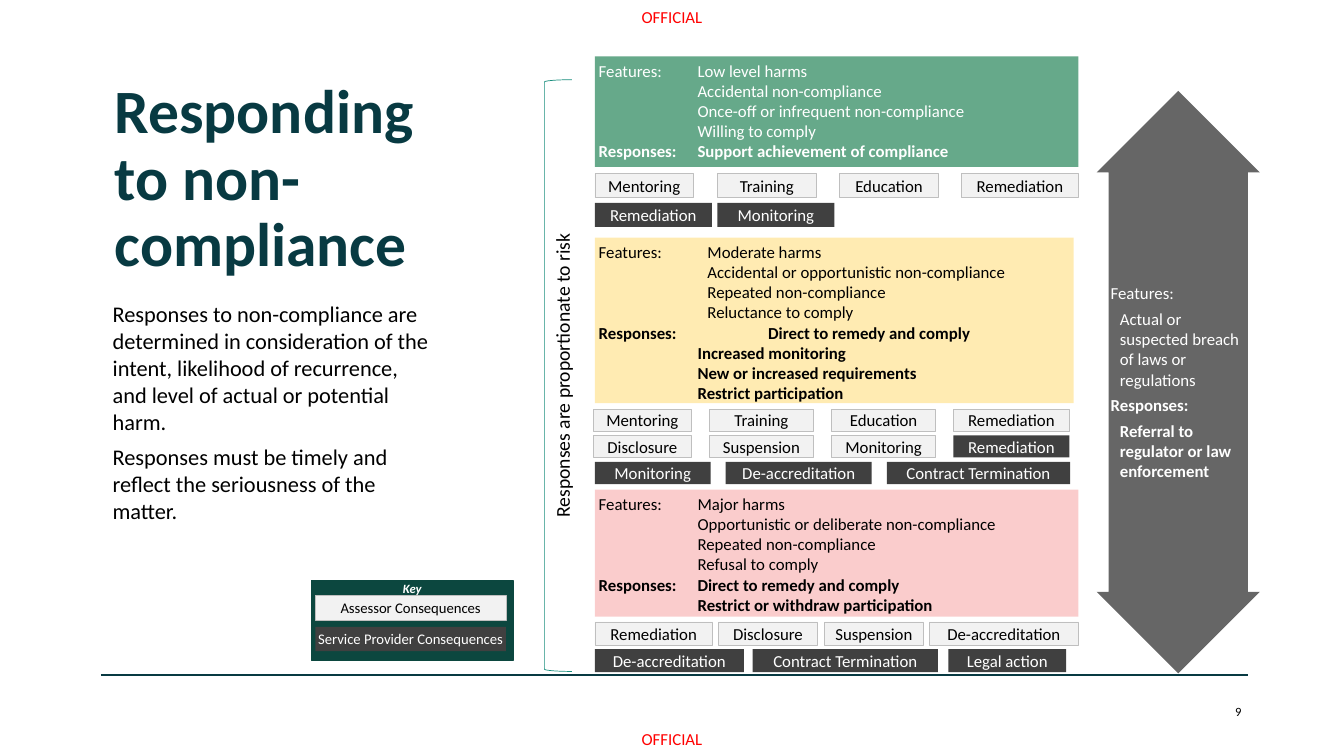
from lxml.etree import SubElement
from pptx import Presentation
from pptx.dml.color import RGBColor
from pptx.enum.shapes import MSO_CONNECTOR as Connector, MSO_SHAPE as Shape
from pptx.enum.text import MSO_ANCHOR as Anchor, MSO_AUTO_SIZE as AutoSize, PP_ALIGN as Align
from pptx.oxml.ns import qn
from pptx.util import Cm, Pt

COLOURS = {
    "ink": "000000", "white": "FFFFFF", "marking": "FF0000", "title": "083A42",
    "key": "0C473F", "bracket": "198E7D", "light": "F2F2F2", "edge": "BFBFBF",
    "dark": "404040", "low": "00703C", "moderate": "FFC000", "major": "E60000",
}
FONT = "Calibri"
TITLE = "Responding to non-compliance"
INTRO = [
    "Responses to non-compliance are determined in consideration of the intent, "
    "likelihood of recurrence, and level of actual or potential harm.",
    "Responses must be timely and reflect the seriousness of the matter.",
]
RISK = "Responses are proportionate to risk"
MARKING = "OFFICIAL"
PAGE_NUMBER = "9"

TAB = 2.49
LEFT = 14.99
LEVELS = [
    {
        "colour": "low", "opacity": 60, "text": "white", "box": (LEFT, 1.42, 12.19, 2.79),
        "features": ["Low level harms", "Accidental non-compliance",
                     "Once-off or infrequent non-compliance", "Willing to comply"],
        "responses": ["Support achievement of compliance"],
        "feature_indent": TAB, "response_indent": TAB, "chip_height": 0.61,
        "rows": [
            (4.37, [("light", "Mentoring", LEFT, 2.49), ("light", "Training", 18.08, 2.49),
                    ("light", "Education", 21.16, 2.49), ("light", "Remediation", 24.23, 2.95)]),
            (5.11, [("dark", "Remediation", LEFT, 2.95), ("dark", "Monitoring", 18.08, 2.95)]),
        ],
    },
    {
        "colour": "moderate", "opacity": 30, "text": "ink", "box": (LEFT, 5.99, 12.07, 4.17),
        "features": ["Moderate harms", "Accidental or opportunistic non-compliance",
                     "Repeated non-compliance", "Reluctance to comply"],
        "responses": ["Direct to remedy and comply", "Increased monitoring",
                      "New or increased requirements", "Restrict participation"],
        "feature_indent": 2.74, "response_indent": 4.27, "chip_height": 0.56,
        "rows": [
            (10.31, [("light", "Mentoring", 14.96, 2.46), ("light", "Training", 17.88, 2.62),
                     ("light", "Education", 20.96, 2.62), ("light", "Remediation", 24.03, 2.92)]),
            (10.97, [("light", "Disclosure", 14.96, 2.46), ("light", "Suspension", 17.88, 2.62),
                     ("light", "Monitoring", 20.96, 2.62), ("dark", "Remediation", 24.03, 2.92)]),
            (11.64, [("dark", "Monitoring", LEFT, 2.92), ("dark", "De-accreditation", 18.29, 3.68),
                     ("dark", "Contract Termination", 22.35, 4.62)]),
        ],
    },
    {
        "colour": "major", "opacity": 20, "text": "ink", "box": (LEFT, 12.34, 12.19, 3.2),
        "features": ["Major harms", "Opportunistic or deliberate non-compliance",
                     "Repeated non-compliance", "Refusal to comply"],
        "responses": ["Direct to remedy and comply", "Restrict or withdraw participation"],
        "feature_indent": TAB, "response_indent": TAB, "chip_height": 0.58,
        "rows": [
            (15.67, [("light", "Remediation", LEFT, 2.97), ("light", "Disclosure", 18.11, 2.49),
                     ("light", "Suspension", 20.78, 2.49), ("light", "De-accreditation", 23.42, 3.76)]),
            (16.36, [("dark", "De-accreditation", LEFT, 3.76), ("dark", "Contract Termination", 18.97, 4.67),
                     ("dark", "Legal action", 23.9, 2.97)]),
        ],
    },
]
KEY_CHIPS = [("light", "Assessor Consequences", 15.01), ("dark", "Service Provider Consequences", 15.8)]
ARROW_GUIDES = {"adj1": 85300, "adj2": 50000}
REFERRAL = [
    ("Features:", False, 0),
    ("Actual or suspected breach of laws or regulations", False, 0.23),
    ("Responses:", True, 0),
    ("Referral to regulator or law enforcement", True, 0.23),
]


def rgb(name):
    return RGBColor.from_string(COLOURS[name])


def set_frame(item, insets, anchor=Anchor.TOP):
    frame = item.text_frame
    frame.word_wrap = True
    frame.auto_size = AutoSize.NONE
    frame.vertical_anchor = anchor
    frame.margin_left, frame.margin_top, frame.margin_right, frame.margin_bottom = map(Cm, insets)
    return frame


def write(frame, lines, size, colour, align=Align.LEFT, after=0):
    paras = []
    for index, line in enumerate(lines):
        para = frame.add_paragraph() if index else frame.paragraphs[0]
        para.text = line
        para.alignment = align
        para.space_before, para.space_after = Pt(0), Pt(after)
        para.font.name, para.font.size = FONT, Pt(size)
        para.font.color.rgb = rgb(colour)
        paras.append(para)
    return paras


def indent(para, left, hanging=0):
    properties = para._p.get_or_add_pPr()
    properties.set("marL", str(Cm(left)))
    properties.set("indent", str(-Cm(hanging)))


def add_box(shapes, kind, box, fill=None, edge=None, width=0.25, opacity=100):
    item = shapes.add_shape(kind, *map(Cm, box))
    item.shadow.inherit = False
    if fill:
        item.fill.solid()
        item.fill.fore_color.rgb = rgb(fill)
        if opacity < 100:
            colour = item._element.spPr.find(qn("a:solidFill"))[0]
            SubElement(colour, qn("a:alpha"), val=str(opacity * 1000))
    else:
        item.fill.background()
    if edge:
        item.line.color.rgb = rgb(edge)
        item.line.width = Pt(width)
    else:
        item.line.fill.background()
    return item


def add_text(page, box, lines, size, colour, insets=(0, 0, 0, 0), **style):
    item = page.shapes.add_textbox(*map(Cm, box))
    return write(set_frame(item, insets), lines, size, colour, **style)


def add_chip(shapes, tone, label, box, size=12):
    chip = add_box(shapes, Shape.RECTANGLE, box, tone, "edge" if tone == "light" else None)
    frame = set_frame(chip, (0.05,) * 4, Anchor.MIDDLE)
    write(frame, [label], size, "ink" if tone == "light" else "white", Align.CENTER)


def add_level(page, level):
    shapes = page.shapes.add_group_shape().shapes
    band = add_box(shapes, Shape.RECTANGLE, level["box"], level["colour"], opacity=level["opacity"])
    sections = [("Features:", level["features"], level["feature_indent"], level["feature_indent"], False),
                ("Responses:", level["responses"], level["response_indent"], TAB, True)]
    rows = [(f"{label if not index else ''}\t{text}", rest if index else first, bold)
            for label, texts, first, rest, bold in sections for index, text in enumerate(texts)]
    paras = write(set_frame(band, (0.1,) * 4), [row[0] for row in rows], 12, level["text"])
    for para, (_, left, bold) in zip(paras, rows):
        para.font.bold = bold
        indent(para, left, left)
    for top, chips in level["rows"]:
        for tone, label, left, width in chips:
            add_chip(shapes, tone, label, (left, top, width, level["chip_height"]))


def add_key(page):
    shapes = page.shapes.add_group_shape().shapes
    panel = add_box(shapes, Shape.RECTANGLE, (7.85, 14.63, 5.08, 2.01), "key", "key", 0.75)
    heading = write(set_frame(panel, (0.05, 0, 0.05, 0.05)), ["Key"], 9, "white", Align.CENTER, 4)[0]
    heading.font.bold = heading.font.italic = True
    for tone, label, top in KEY_CHIPS:
        add_chip(shapes, tone, label, (7.95, top, 4.8, 0.61), 10.5)


def add_arrow(page):
    arrow = add_box(page.shapes, Shape.UP_DOWN_ARROW, (27.64, 2.29, 4.11, 14.68), "ink", opacity=60)
    guides = arrow._element.spPr.find(qn("a:prstGeom")).find(qn("a:avLst"))
    guides.clear()
    for name, value in ARROW_GUIDES.items():
        SubElement(guides, qn("a:gd"), name=name, fmla=f"val {value}")
    frame = set_frame(arrow, (0.05,) * 4, Anchor.MIDDLE)
    paras = write(frame, [row[0] for row in REFERRAL], 12, "white", after=4)
    for para, (_, bold, left) in zip(paras, REFERRAL):
        para.font.bold = bold
        indent(para, left)


def main():
    deck = Presentation()
    deck.slide_width, deck.slide_height = Cm(33.87), Cm(19.05)
    page = deck.slides.add_slide(deck.slide_layouts[5])

    for top in (0.18, 18.36):
        add_text(page, (16.02, top, 1.83, 0.51), [MARKING], 12, "marking", align=Align.CENTER)
    rule = page.shapes.add_connector(Connector.STRAIGHT, Cm(2.54), Cm(17.02), Cm(31.45), Cm(17.02))
    rule.line.color.rgb = rgb("title")
    rule.line.width = Pt(1.5)
    SubElement(rule._element.spPr, qn("a:effectLst"))

    title = page.shapes.title
    title.left, title.top, title.width, title.height = map(Cm, (2.79, 1.9, 9.22, 5.59))
    heading = write(set_frame(title, (0.1, 0.13, 0.25, 0.13)), [TITLE], 44, "title")[0]
    heading.font.bold = True
    heading.line_spacing = 0.9
    add_text(page, (2.84, 7.47, 8.26, 4.7), INTRO, 16, "ink", (0, 0.1, 0.1, 0.1), after=6)

    add_key(page)
    bracket = add_box(page.shapes, Shape.LEFT_BRACKET, (13.72, 2.01, 0.69, 14.91), None, "bracket", 0.5)
    frame = set_frame(bracket, (0.25, 0.13, 0.25, 0.13), Anchor.MIDDLE)
    frame._txBody.bodyPr.set("vert", "vert270")
    write(frame, [RISK], 14, "ink", Align.CENTER)
    for level in LEVELS:
        add_level(page, level)
    add_arrow(page)

    add_text(page, (28.3, 17.73, 2.99, 0.38), [PAGE_NUMBER], 9, "ink", align=Align.RIGHT)
    deck.save("out.pptx")


if __name__ == "__main__":
    main()
